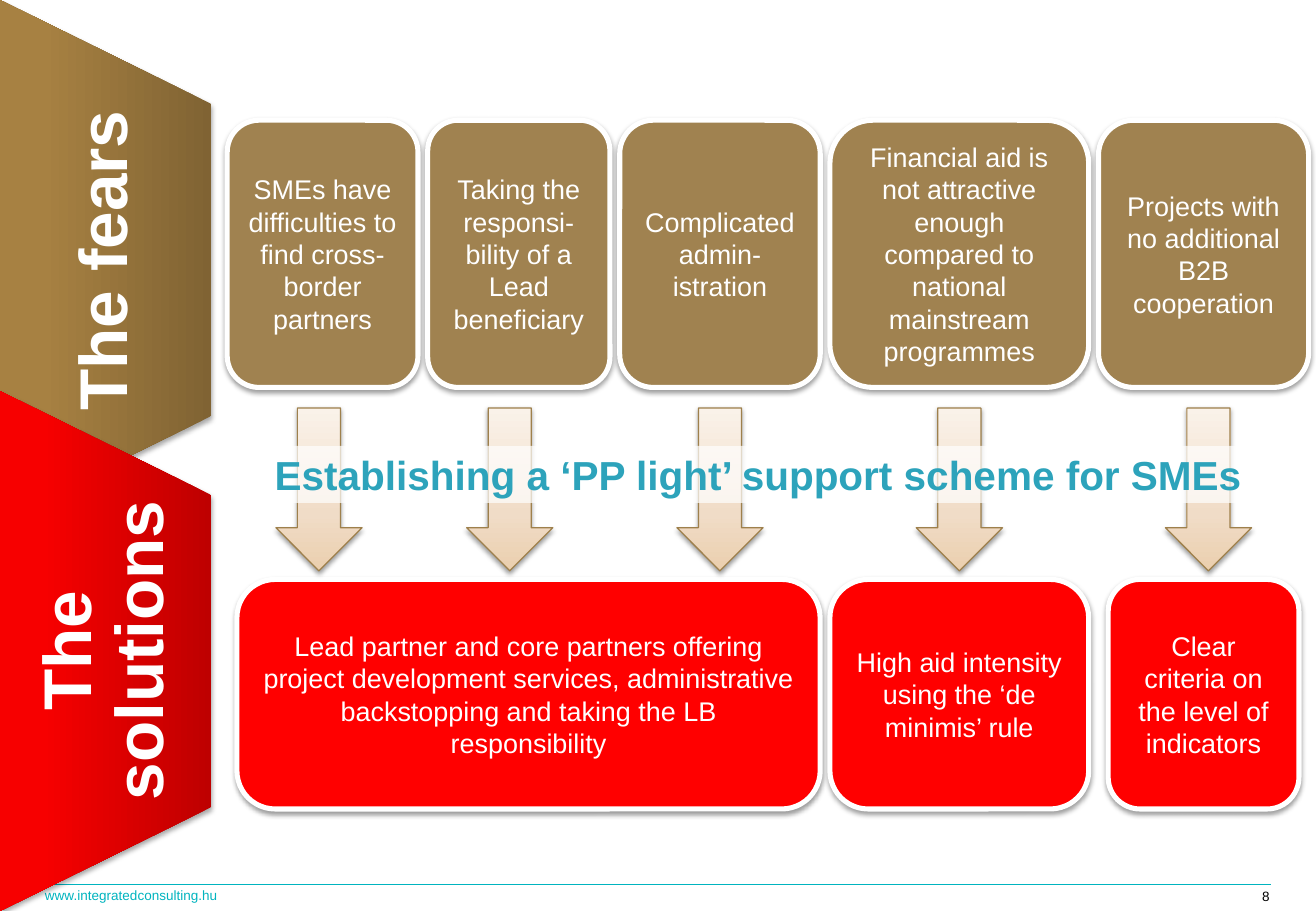
from pptx import Presentation
from pptx import util as u
from pptx.dml.color import RGBColor
from pptx.enum import shapes, text
from pptx.oxml import parse_xml
from pptx.oxml.ns import nsdecls, qn

Inches, Pt = u.Inches, u.Pt
MSO, ALIGN, ANCHOR = shapes.MSO_SHAPE, text.PP_ALIGN, text.MSO_ANCHOR

COLORS = {"fear": "A08250", "solution": "FF0000", "white": "FFFFFF",
          "black": "000000", "teal": "00B4BF", "heading": "2DA3BB",
          "arrow_line": "9E804C"}
GRADIENTS = {
    "fear": [(0, "806333"), (80, "A78142"), (100, "A98240")],
    "solution": [(0, "BE0000"), (80, "F70000"), (100, "F80000")],
    "arrow": [(0, "EBCFAE"), (35, "F0DCC7"), (100, "FAF2E9")],
}

GAP = 0.08
FEARS = [
    (1.57, "SMEs have difficulties to find cross-border partners"),
    (1.5, "Taking the responsi-bility of a Lead beneficiary"),
    (1.65, "Complicated admin-istration"),
    (2.13, "Financial aid is not attractive enough compared to national "
           "mainstream programmes"),
    (1.73, "Projects with no additional B2B cooperation"),
]
SOLUTIONS = [
    (1.95, 4.8, "Lead partner and core partners offering project development "
                "services, administrative backstopping and taking the LB "
                "responsibility"),
    (6.83, 2.13, "High aid intensity using the ‘de minimis’ rule"),
    (9.12, 1.57, "Clear criteria on the level of indicators"),
]
ARROW_LEFTS = [2.27, 3.84, 5.57, 7.54, 9.59]


def rgb(name):
    return RGBColor.from_string(COLORS[name])


def box(left, top, width, height):
    return [Inches(v) for v in (left, top, width, height)]


def write(sp, words, size, color, bold=False, align=ALIGN.CENTER,
          anchor=ANCHOR.MIDDLE, spacing=None, margins=None):
    tf = sp.text_frame
    tf.word_wrap = True
    tf.auto_size = text.MSO_AUTO_SIZE.NONE
    tf.vertical_anchor = anchor
    if margins:
        (tf.margin_left, tf.margin_top,
         tf.margin_right, tf.margin_bottom) = [Inches(m) for m in margins]
    p = tf.paragraphs[0]
    p.alignment = align
    p.line_spacing = spacing
    r = p.add_run()
    r.text = words
    r.font.name, r.font.size, r.font.bold = "Arial", Pt(size), bold
    r.font.color.rgb = rgb(color)


def set_shadow(sp, opacity, distance):
    sp.shadow.inherit = False
    sp.element.spPr.find(qn("a:effectLst")).append(parse_xml(
        f'<a:outerShdw {nsdecls("a")} blurRad="{Pt(3.1)}" dist="{Pt(distance)}" '
        f'dir="5400000" rotWithShape="0"><a:srgbClr val="{COLORS["black"]}">'
        f'<a:alpha val="{opacity * 1000}"/></a:srgbClr></a:outerShdw>'))


def set_gradient(sp, name):
    sp.fill.gradient()
    sp.fill.gradient_angle = 90
    stops = sp.element.spPr.find(".//" + qn("a:gsLst"))
    for stop in list(stops):
        stops.remove(stop)
    for position, color in GRADIENTS[name]:
        stops.append(parse_xml(
            f'<a:gs {nsdecls("a")} pos="{position * 1000}">'
            f'<a:srgbClr val="{color}"/></a:gs>'))


def add_tab(s, top, label_top, label, gradient):
    sp = s.shapes.add_shape(MSO.FLOWCHART_MANUAL_OPERATION,
                            *box(-1.27, top, 4.28, 1.74))
    sp.rotation = 270
    set_gradient(sp, gradient)
    sp.line.fill.background()
    set_shadow(sp, 35, 1.8)
    tb = s.shapes.add_textbox(*box(0, label_top, 1.74, 2.57))
    write(tb, label, 40, "white", bold=True, spacing=0.9,
          margins=(0.3, 0, 0.3, 0))
    tb.element.find(".//" + qn("a:bodyPr")).set("vert", "vert270")


def add_card(s, left, top, width, height, words, color):
    sp = s.shapes.add_shape(MSO.ROUNDED_RECTANGLE,
                            *box(left, top, width, height))
    sp.fill.solid()
    sp.fill.fore_color.rgb = rgb(color)
    sp.line.color.rgb = rgb("white")
    sp.line.width = Pt(3)
    set_shadow(sp, 38, 1.6)
    write(sp, words, 16, "white")


def add_arrow(s, left):
    sp = s.shapes.add_shape(MSO.DOWN_ARROW, *box(left, 3.36, 0.71, 1.34))
    set_gradient(sp, "arrow")
    sp.line.color.rgb = rgb("arrow_line")
    sp.line.width = Pt(0.75)
    set_shadow(sp, 38, 1.6)


def add_footer(s):
    rule = s.shapes.add_connector(shapes.MSO_CONNECTOR.STRAIGHT, Inches(0.38),
                                  Inches(7.28), Inches(10.46), Inches(7.28))
    rule.line.color.rgb = rgb("teal")
    rule.line.width = Pt(0.5)
    rule.element.spPr.append(parse_xml(f'<a:effectLst {nsdecls("a")}/>'))
    for place, words, color, align in [
            ((0.37, 7.32, 2.25, 0.11), "www.integratedconsulting.hu", "teal",
             ALIGN.LEFT),
            ((9.79, 7.33, 0.66, 0.12), "8", "black", ALIGN.RIGHT)]:
        tb = s.shapes.add_textbox(*box(*place))
        write(tb, words, 8, color, align=align, anchor=ANCHOR.TOP,
              spacing=0.9, margins=(0, 0, 0, 0))


def place_title(s, words):
    sp = s.shapes.title
    sp.left, sp.top, sp.width, sp.height = box(1.95, 3.67, 8.58, 0.47)
    sp.fill.solid()
    sp.fill.fore_color.rgb = rgb("white")
    white = sp.element.spPr.find(".//" + qn("a:srgbClr"))
    white.append(parse_xml(f'<a:alpha {nsdecls("a")} val="70000"/>'))
    write(sp, words, 24, "heading", bold=True)
    # Bring the banner in front of the arrows
    sp.element.getparent().append(sp.element)


def main():
    prs = Presentation()
    prs.slide_width, prs.slide_height = Inches(10.83), Inches(7.5)
    s = prs.slides.add_slide(prs.slide_layouts[5])
    add_footer(s)

    # Fears row
    add_tab(s, 1.27, 0.86, "The fears", "fear")
    left = 1.87
    for width, words in FEARS:
        add_card(s, left, 0.99, width, 2.2, words, "fear")
        left += width + GAP

    # Solutions row
    add_tab(s, 4.49, 4.07, "The solutions", "solution")
    for left, width, words in SOLUTIONS:
        add_card(s, left, 4.77, width, 1.89, words, "solution")

    # Arrows and banner between the rows
    for left in ARROW_LEFTS:
        add_arrow(s, left)
    place_title(s, "Establishing a ‘PP light’ support scheme for SMEs")
    prs.save("out.pptx")


if __name__ == "__main__":
    main()
